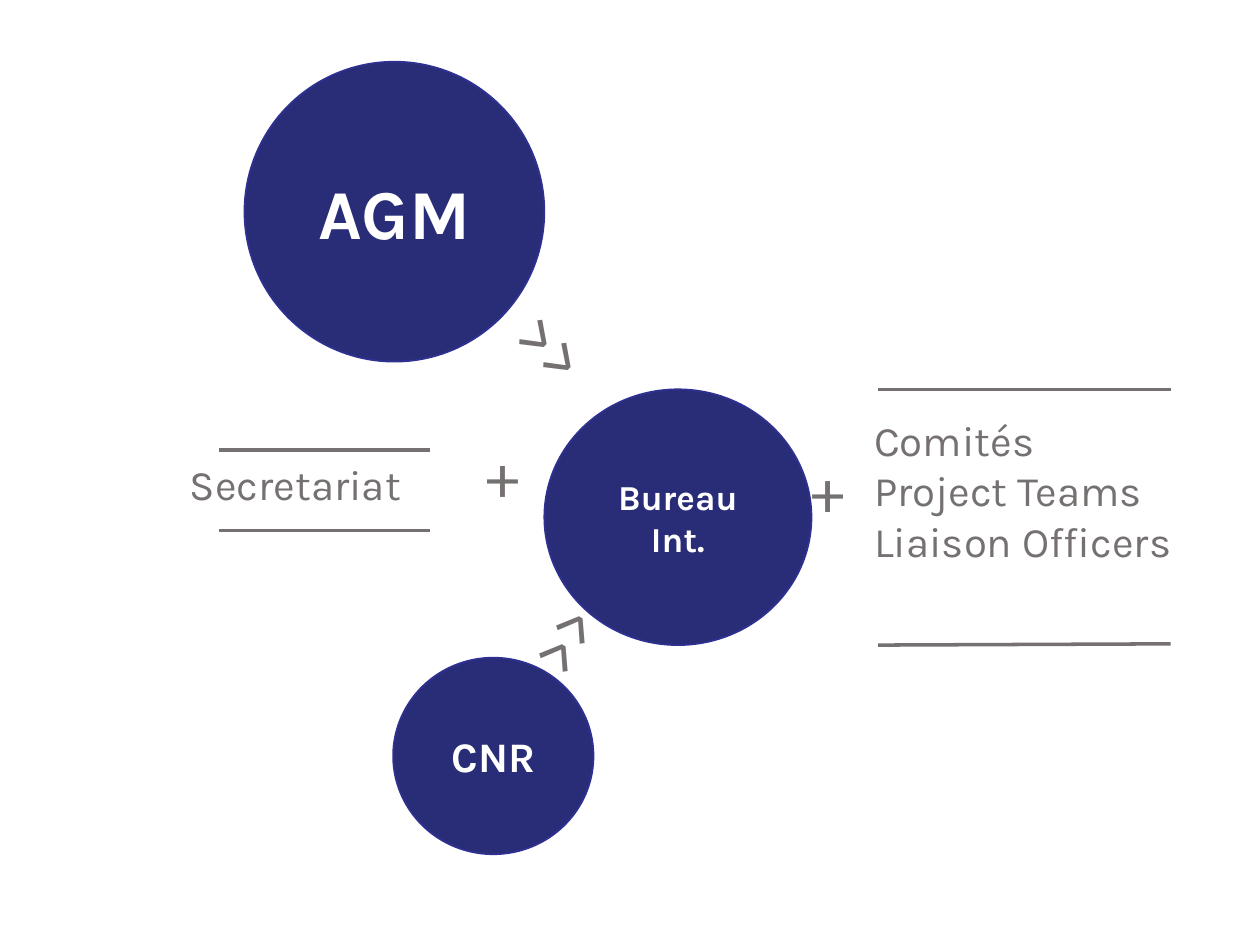
from dataclasses import dataclass

from lxml import etree
from pptx import Presentation
from pptx.dml.color import RGBColor
from pptx.enum import shapes as sh, text as tx
from pptx.oxml.ns import qn
from pptx.util import Inches, Pt

NAVY, EDGE, GREY, WHITE = "292D78", "2E3192", "767171", "FFFFFF"
FONT = "Karla"


@dataclass
class Disc:
    lines: list[str]
    left: float
    top: float
    width: float
    height: float
    size: int


@dataclass
class Label:
    lines: list[str]
    left: float
    top: float
    width: float
    height: float
    size: int = 24
    turn: float = 0


@dataclass
class Rule:
    left: float
    right: float
    start: float
    end: float


DISCS = [
    Disc(["AGM"], 1.94, 0.49, 2.38, 2.38, 40),
    Disc(["Bureau", "Int."], 4.32, 3.09, 2.12, 2.03, 20),
    Disc(["CNR"], 3.12, 5.22, 1.59, 1.56, 24),
]
LABELS = [
    Label(["Comités", "Project Teams", "Liaison Officers"], 6.84, 3.24, 3.16, 1.72),
    Label(["Secretariat"], 1.41, 3.59, 3.16, 0.5),
    Label(["+"], 6.34, 3.52, 0.81, 0.71, 36),
    Label(["+"], 3.41, 3.54, 0.81, 0.71, 36, 180),
    Label(["<<"], 4.15, 4.77, 0.75, 0.71, 36, 121.7),
    Label(["<<"], 3.89, 2.42, 0.81, 0.71, 36, 223.4),
]
RULES = [
    Rule(1.74, 3.41, 3.57, 3.57),
    Rule(1.74, 3.41, 4.21, 4.21),
    Rule(6.97, 9.29, 3.09, 3.09),
    Rule(6.97, 9.29, 5.12, 5.11),
]


def rgb(code: str) -> RGBColor:
    return RGBColor.from_string(code)


def place(item: Disc | Label) -> list[int]:
    return [Inches(n) for n in (item.left, item.top, item.width, item.height)]


def write(frame, lines: list[str], size: int, color: str, align, bold: bool = False) -> None:
    frame.word_wrap = True
    for i, line in enumerate(lines):
        para = frame.paragraphs[0] if i == 0 else frame.add_paragraph()
        para.alignment = align
        run = para.add_run()
        run.text = line
        font = run.font
        font.name, font.size, font.bold = FONT, Pt(size), bold
        font.color.rgb = rgb(color)


def draw_disc(slide, disc: Disc) -> None:
    shape = slide.shapes.add_shape(sh.MSO_SHAPE.OVAL, *place(disc))
    shape.shadow.inherit = False
    shape.fill.solid()
    shape.fill.fore_color.rgb = rgb(NAVY)
    shape.line.color.rgb = rgb(EDGE)
    shape.line.width = Pt(1)
    shape.text_frame.vertical_anchor = tx.MSO_ANCHOR.MIDDLE
    write(shape.text_frame, disc.lines, disc.size, WHITE, tx.PP_ALIGN.CENTER, True)


def draw_label(slide, label: Label) -> None:
    box = slide.shapes.add_textbox(*place(label))
    box.rotation = label.turn
    write(box.text_frame, label.lines, label.size, GREY, tx.PP_ALIGN.LEFT)
    box.text_frame.auto_size = tx.MSO_AUTO_SIZE.SHAPE_TO_FIT_TEXT


def draw_rule(slide, rule: Rule) -> None:
    line = slide.shapes.add_connector(
        sh.MSO_CONNECTOR.STRAIGHT,
        Inches(rule.left), Inches(rule.start), Inches(rule.right), Inches(rule.end),
    )
    line.line.color.rgb = rgb(GREY)
    line.line.width = Pt(2)
    etree.SubElement(line._element.spPr, qn("a:effectLst"))


def main() -> None:
    deck = Presentation()
    deck.slide_width, deck.slide_height = Inches(10), Inches(7.5)
    slide = deck.slides.add_slide(deck.slide_layouts[6])
    for disc in DISCS:
        draw_disc(slide, disc)
    for label in LABELS:
        draw_label(slide, label)
    for rule in RULES:
        draw_rule(slide, rule)
    deck.save("out.pptx")


if __name__ == "__main__":
    main()
